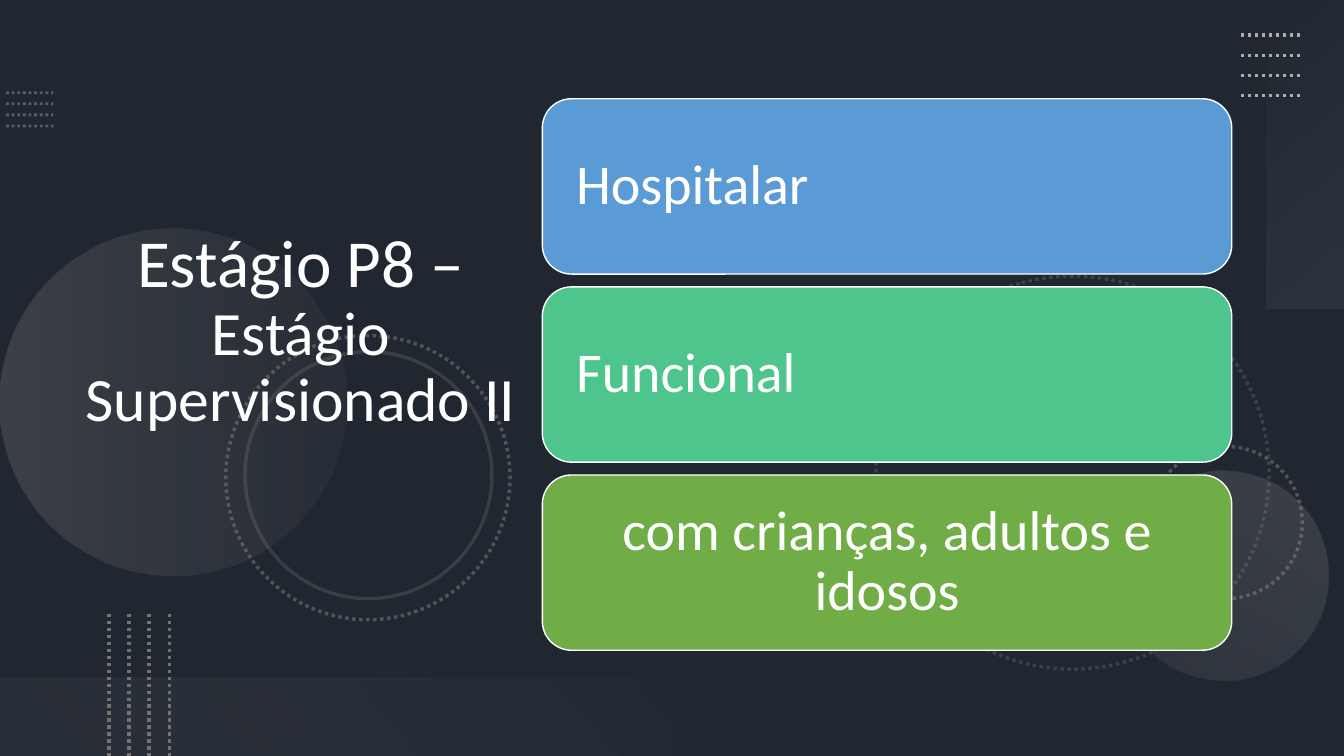
"""Build the "Estágio P8" slide: a title beside three cards on a dark decorated background."""
from lxml import etree
from pptx import Presentation, util as u
from pptx.dml.color import RGBColor
from pptx.enum import dml, shapes, text
from pptx.oxml import ns

WHITE = RGBColor(0xFF, 0xFF, 0xFF)
BLACK = RGBColor(0x00, 0x00, 0x00)
SLATE = RGBColor(0x44, 0x54, 0x6A)
STEEL = RGBColor(0x84, 0x97, 0xB0)
GREY = RGBColor(0x76, 0x71, 0x71)
SILVER = RGBColor(0xAF, 0xAB, 0xAB)
PALE = RGBColor(0xF5, 0xF5, 0xF5)
BLUE = RGBColor(0x5B, 0x9B, 0xD5)
MINT = RGBColor(0x4D, 0xC5, 0x8D)
GREEN = RGBColor(0x70, 0xAD, 0x47)
OVAL = shapes.MSO_SHAPE.OVAL
RECT = shapes.MSO_SHAPE.RECTANGLE

prs = Presentation()
prs.slide_width, prs.slide_height = u.Inches(13.33), u.Inches(7.5)
COLS, ROWS = 40, 22.5
CELL = prs.slide_width / COLS
s = prs.slides.add_slide(prs.slide_layouts[5])
s.background.fill.solid()
s.background.fill.fore_color.rgb = SLATE


def add_shape(kind, x, y, w, h, rotation=0):
    sp = s.shapes.add_shape(kind, *(int(v * CELL) for v in (x, y, w, h)))
    sp.rotation = rotation
    sp.shadow.inherit = False
    sp.fill.background()
    sp.line.fill.background()
    return sp


def set_line(sp, color, width, dotted=True, opacity=100):
    sp.line.color.rgb = color
    sp.line.width = u.Pt(width)
    if dotted:
        sp.line.dash_style = dml.MSO_LINE.ROUND_DOT
    if opacity < 100:
        clr = sp._element.spPr.find(ns.qn("a:ln")).find(".//" + ns.qn("a:srgbClr"))
        etree.SubElement(clr, ns.qn("a:alpha"), val=str(opacity * 1000))


shade = add_shape(RECT, 0, 0, COLS, ROWS)
shade.fill.solid()
shade.fill.fore_color.rgb = BLACK
shade_color = shade._element.spPr.find(".//" + ns.qn("a:srgbClr"))
etree.SubElement(shade_color, ns.qn("a:alpha"), val="53000")

rings = [
    (26.07, 8.22, 11.7, 75, True, 35),
    (34.23, 13.29, 4.53, 270, True, 60),
    (6.72, 9.99, 8.46, 75, True, 60),
    (7.29, 10.47, 7.35, 75, False, 30),
]
for x, y, size, rotation, dotted, opacity in rings:
    set_line(add_shape(OVAL, x, y, size, size, rotation), GREY, 2.5, dotted, opacity)

glows = [
    (OVAL, (0, 6.81, 10.32, 10.32, 270), 90, [(0, SILVER, 20), (100, GREY, 10)]),
    (OVAL, (33.3, 14.01, 6.24, 6.24, 210), 90, [(0, SILVER, 10), (100, SILVER, 20)]),
    (RECT, (34.26, 3.42, 9.18, 2.34, 270), 140, [(0, PALE, 0), (100, SILVER, 10)]),
    (RECT, (0, 20.16, 20, 2.34, 180), 140, [(10, GREY, 10), (100, PALE, 0)]),
]
for kind, frame, angle, stops in glows:
    spPr = add_shape(kind, *frame)._element.spPr
    grad = etree.Element(ns.qn("a:gradFill"), rotWithShape="1")
    stop_list = etree.SubElement(grad, ns.qn("a:gsLst"))
    for pos, color, opacity in stops:
        stop = etree.SubElement(stop_list, ns.qn("a:gs"), pos=str(pos * 1000))
        clr = etree.SubElement(stop, ns.qn("a:srgbClr"), val=str(color))
        etree.SubElement(clr, ns.qn("a:alpha"), val=str(opacity * 1000))
    etree.SubElement(grad, ns.qn("a:lin"), ang=str(angle * 60000), scaled="0")
    spPr.replace(spPr.find(ns.qn("a:noFill")), grad)

dot_rows = [
    ((0.18, 2.76, 1.59, 2.76), (0, 0.33), STEEL, 2, 50),
    ((36.93, 1.05, 38.73, 1.05), (0, 0.6), SILVER, 2.5, 100),
    ((3.24, 18.27, 3.24, ROWS), (0.6, 0), GREY, 2.5, 100),
]
for (x1, y1, x2, y2), (dx, dy), color, width, opacity in dot_rows:
    for i in range(4):
        ends = (x1 + i * dx, y1 + i * dy, x2 + i * dx, y2 + i * dy)
        dots = s.shapes.add_connector(shapes.MSO_CONNECTOR.STRAIGHT, *(int(v * CELL) for v in ends))
        set_line(dots, color, width, opacity=opacity)
        etree.SubElement(dots._element.spPr, ns.qn("a:effectLst"))

title = s.shapes.title
title._element.getparent().append(title._element)
title.left, title.top, title.width, title.height = (int(v * CELL) for v in (2.07, 1.62, 13.77, 18.51))
tf = title.text_frame
tf.word_wrap = True
tf.auto_size = text.MSO_AUTO_SIZE.NONE
tf.vertical_anchor = text.MSO_ANCHOR.MIDDLE
tf.margin_bottom = int(2.13 * CELL)
p = tf.paragraphs[0]
p.alignment = text.PP_ALIGN.CENTER
p.line_spacing = 0.9
p.font.name = "Calibri"
p.font.color.rgb = WHITE
for words, size in [("Estágio P8 – ", 48), ("Estágio Supervisionado II", 44)]:
    r = p.add_run()
    r.text = words
    r.font.size = u.Pt(size)

cards = [
    ("Hospitalar", BLUE, text.PP_ALIGN.LEFT),
    ("Funcional", MINT, text.PP_ALIGN.LEFT),
    ("com crianças, adultos e idosos", GREEN, text.PP_ALIGN.CENTER),
]
for i, (words, color, alignment) in enumerate(cards):
    card = add_shape(shapes.MSO_SHAPE.ROUNDED_RECTANGLE, 16.14, 2.94 + i * 5.6, 20.52, 5.22)
    card.fill.solid()
    card.fill.fore_color.rgb = color
    set_line(card, WHITE, 1, dotted=False)
    tf = card.text_frame
    tf.word_wrap = True
    tf.vertical_anchor = text.MSO_ANCHOR.MIDDLE
    tf.margin_left = tf.margin_right = tf.margin_top = tf.margin_bottom = int(0.75 * CELL)
    p = tf.paragraphs[0]
    p.text = words
    p.alignment = alignment
    p.line_spacing = 0.9
    p.font.name = "Calibri"
    p.font.size = u.Pt(40)
    p.font.color.rgb = WHITE

prs.save("out.pptx")
